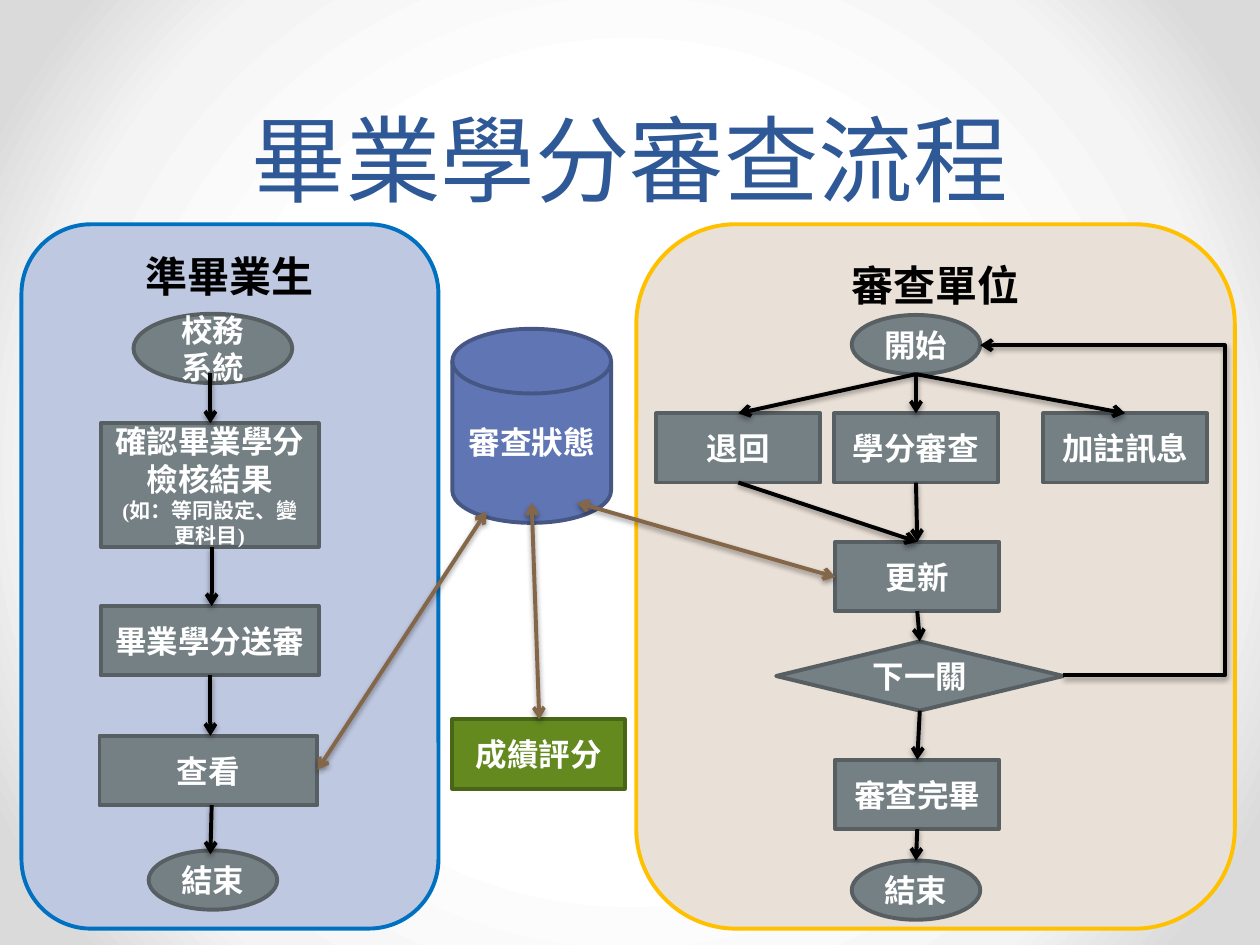
"""Build the graduation credit review flow slide."""
from dataclasses import dataclass

from lxml import etree
from pptx import Presentation
from pptx.dml.color import RGBColor
from pptx.enum.shapes import MSO_CONNECTOR as Link, MSO_SHAPE as Kind
from pptx.enum.text import MSO_ANCHOR as Anchor, PP_ALIGN as Align
from pptx.oxml import parse_xml
from pptx.oxml.ns import nsdecls, qn
from pptx.util import Inches, Pt

FONT = "Times New Roman"
BLACK, WHITE, BROWN = "000000", "FFFFFF", "846648"
GRAY = ("758085", "575F62")
BLUE = ("6076B4", "475785")
GREEN = ("63891F", "496517")
NODE_TEXT = {"size": Pt(18), "bold": True, "name": FONT}
PANEL_TEXT = {"size": Pt(24), "bold": True, "name": FONT}
NOTE_TEXT = {"size": Pt(12), "bold": True, "name": FONT}
TITLE_TEXT = {"size": Pt(54), "bold": False, "name": FONT}
STEP_W, TASK_W, ROW_H = 1.73, 1.3, 0.55
END_W, END_H = 1.02, 0.47


@dataclass
class Node:
    label: str
    left: float
    top: float
    width: float
    height: float = ROW_H
    kind: Kind = Kind.RECTANGLE
    colors: tuple[str, str] = GRAY
    note: str = ""


@dataclass
class Arrow:
    start: tuple[float, float]
    end: tuple[float, float]
    color: str = BLACK
    ends: tuple[str, ...] = ("tailEnd",)
    link: Link = Link.STRAIGHT


PANELS = [
    Node("審查單位", 5.05, 1.78, 4.75, 5.59, Kind.ROUNDED_RECTANGLE, ("E9E0D7", "FFC000")),
    Node("準畢業生", 0.17, 1.78, 3.31, 5.59, Kind.ROUNDED_RECTANGLE, ("BFC8E1", "0070C0")),
]
NODES = [
    Node("校務系統", 1.06, 2.49, 1.26, kind=Kind.OVAL),
    Node("確認畢業學分檢核結果", 0.8, 3.36, STEP_W, 0.98, note="(如：等同設定、變更科目)"),
    Node("畢業學分送審", 0.8, 4.81, STEP_W),
    Node("查看", 0.79, 5.84, STEP_W),
    Node("結束", 1.18, 6.75, END_W, END_H, Kind.OVAL),
    Node("開始", 6.76, 2.5, END_W, END_H, Kind.OVAL),
    Node("退回", 5.21, 3.28, TASK_W),
    Node("學分審查", 6.62, 3.28, TASK_W),
    Node("加註訊息", 8.28, 3.28, TASK_W),
    Node("更新", 6.63, 4.3, TASK_W),
    Node("下一關", 6.16, 5.09, 2.28, kind=Kind.DIAMOND),
    Node("審查完畢", 6.63, 6.03, TASK_W),
    Node("結束", 6.76, 6.83, END_W, END_H, Kind.OVAL),
    Node("審查狀態", 3.59, 2.61, 1.26, 1.54, Kind.FLOWCHART_MAGNETIC_DISK, BLUE),
    Node("成績評分", 3.59, 5.71, 1.37, colors=GREEN),
]
START, UPDATE = (7.27, 2.97), (7.28, 4.3)
BOTH = ("headEnd", "tailEnd")
ARROWS = [
    Arrow((1.67, 2.96), (1.67, 3.36)),
    Arrow((1.68, 4.34), (1.68, 4.81)),
    Arrow((1.67, 5.36), (1.67, 5.84)),
    Arrow((1.68, 6.39), (1.67, 6.78)),
    *(Arrow(START, (x, 3.28)) for x in (5.86, 7.27, 8.93)),
    *(Arrow((x, 3.83), UPDATE) for x in (5.86, 7.27)),
    Arrow((7.28, 4.85), (7.3, 5.09)),
    Arrow((7.3, 5.64), (7.28, 6.03)),
    Arrow((7.28, 6.58), (7.27, 6.83)),
    Arrow((8.44, 5.36), (7.78, 2.74), link=Link.ELBOW),
    Arrow((2.52, 6.11), (3.86, 4.06), BROWN, BOTH),
    Arrow((4.28, 5.71), (4.22, 3.99), BROWN, BOTH),
    Arrow((6.63, 4.58), (4.58, 3.99), BROWN, BOTH),
]


def rgb(color: str) -> RGBColor:
    return RGBColor.from_string(color)


def write(paragraph, text: str, formats: dict, color: str) -> None:
    paragraph.alignment = Align.CENTER
    run = paragraph.add_run()
    run.text = text
    for key, value in formats.items():
        setattr(run.font, key, value)
    run.font.color.rgb = rgb(color)


def draw_node(slide, node: Node, formats: dict, color: str, anchor: Anchor) -> None:
    box = map(Inches, (node.left, node.top, node.width, node.height))
    shape = slide.shapes.add_shape(node.kind, *box)
    shape.shadow.inherit = False
    fill, outline = node.colors
    shape.fill.solid()
    shape.fill.fore_color.rgb = rgb(fill)
    shape.line.color.rgb = rgb(outline)
    shape.line.width = Pt(2.25)
    frame = shape.text_frame
    frame.word_wrap = True
    frame.vertical_anchor = anchor
    write(frame.paragraphs[0], node.label, formats, color)
    if node.note:
        write(frame.add_paragraph(), node.note, NOTE_TEXT, color)


def draw_arrow(slide, arrow: Arrow) -> None:
    points = map(Inches, (*arrow.start, *arrow.end))
    connector = slide.shapes.add_connector(arrow.link, *points)
    connector.line.color.rgb = rgb(arrow.color)
    connector.line.width = Pt(2.25)
    properties = connector._element.spPr
    outline = properties.find(qn("a:ln"))
    for end in arrow.ends:
        etree.SubElement(outline, qn(f"a:{end}"), type="arrow")
    properties.append(parse_xml(
        f'<a:effectLst {nsdecls("a")}><a:outerShdw blurRad="{Pt(3.1)}" dist="{Pt(1.6)}" '
        'dir="5400000" rotWithShape="0"><a:srgbClr val="000000"><a:alpha val="38000"/>'
        '</a:srgbClr></a:outerShdw></a:effectLst>'))
    if arrow.link == Link.ELBOW:
        guides = properties.find(qn("a:prstGeom")).get_or_add_avLst()
        etree.SubElement(guides, qn("a:gd"), name="adj1", fmla="val -194300")


def paint_background(slide) -> None:
    slide.background.fill.gradient()
    gradient = next(slide.background._cSld.iter(qn("a:gradFill")))
    stops = "".join(
        f'<a:gs pos="{place}000"><a:srgbClr val="{color}"/></a:gs>'
        for place, color in ((50, "FFFFFF"), (76, "F4F4F4"), (92, "DADADA")))
    gradient.getparent().replace(gradient, parse_xml(
        f'<a:gradFill {nsdecls("a")} rotWithShape="1"><a:gsLst>{stops}</a:gsLst>'
        '<a:path path="circle"><a:fillToRect l="50000" t="50000" r="50000" b="50000"/>'
        '</a:path></a:gradFill>'))


def draw_title(slide, text: str) -> None:
    title = slide.shapes.add_textbox(*map(Inches, (0.5, 0, 9, 1.75))).text_frame
    title.word_wrap = True
    title.vertical_anchor = Anchor.BOTTOM
    title.paragraphs[0].line_spacing = Pt(58)
    write(title.paragraphs[0], text, TITLE_TEXT, "2F5897")


def main() -> None:
    deck = Presentation()
    deck.slide_width, deck.slide_height = Inches(10), Inches(7.5)
    slide = deck.slides.add_slide(deck.slide_layouts[6])
    paint_background(slide)
    for panel in PANELS:
        draw_node(slide, panel, PANEL_TEXT, BLACK, Anchor.TOP)
    for node in NODES:
        draw_node(slide, node, NODE_TEXT, WHITE, Anchor.MIDDLE)
    for arrow in ARROWS:
        draw_arrow(slide, arrow)
    draw_title(slide, "畢業學分審查流程")
    deck.save("out.pptx")


if __name__ == "__main__":
    main()
